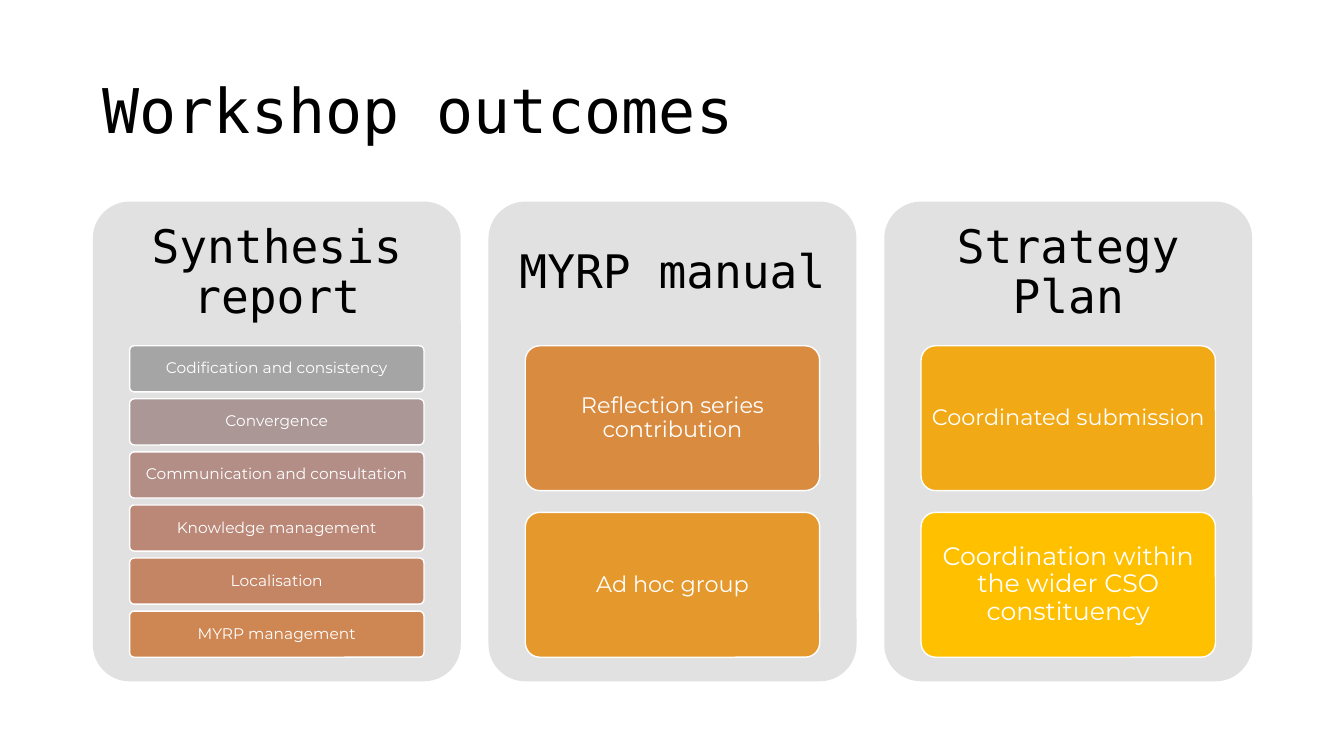
from dataclasses import dataclass

from pptx import Presentation
from pptx.dml.color import RGBColor
from pptx.enum import shapes, text
from pptx.util import Inches, Pt

COLORS = {
    "black": "000000", "white": "FFFFFF", "card": "E1E1E1",
    "gray": "A5A5A5", "mauve": "AB9896", "dusk": "B38E87", "rose": "BB8776",
    "clay": "C48565", "copper": "CE8753", "orange": "D98C3F",
    "amber": "E5982B", "gold": "F1A916", "yellow": "FFC000",
}
MONO, SANS = "DejaVu Sans Mono", "Montserrat"

# Card grid
LEFT, TOP, WIDTH, HEIGHT, STEP = 0.92, 2, 3.65, 4.76, 3.925
HEAD = 1.43
# Items share a fixed stack height; the gap is a share of the item height
INSET, STACK, GAP = 0.365, 3.09, 0.15


@dataclass
class Item:
    label: str
    color: str
    size: int


@dataclass
class Card:
    title: str
    items: list[Item]


CARDS = [
    Card("Synthesis report", [
        Item("Codification and consistency", "gray", 11),
        Item("Convergence", "mauve", 11),
        Item("Communication and consultation", "dusk", 11),
        Item("Knowledge management", "rose", 11),
        Item("Localisation", "clay", 11),
        Item("MYRP management", "copper", 11),
    ]),
    Card("MYRP manual", [
        Item("Reflection series contribution", "orange", 16),
        Item("Ad hoc group", "amber", 16),
    ]),
    Card("Strategy Plan", [
        Item("Coordinated submission", "gold", 16),
        Item("Coordination within the wider CSO constituency", "yellow", 18),
    ]),
]


def rgb(name: str) -> RGBColor:
    return RGBColor.from_string(COLORS[name])


def write(shape, words: str, *, size: int, font: str, color: str,
          pad: tuple[float, float], align=text.PP_ALIGN.CENTER) -> None:
    frame = shape.text_frame
    frame.word_wrap = True
    frame.vertical_anchor = text.MSO_ANCHOR.MIDDLE
    frame.margin_left = frame.margin_right = Inches(pad[0])
    frame.margin_top = frame.margin_bottom = Inches(pad[1])
    para = frame.paragraphs[0]
    para.alignment = align
    para.line_spacing = 0.9
    run = para.add_run()
    run.text = words
    run.font.size = Pt(size)
    run.font.name = font
    run.font.color.rgb = rgb(color)


def add_text(slide, x: float, y: float, w: float, h: float):
    return slide.shapes.add_textbox(Inches(x), Inches(y), Inches(w), Inches(h))


def add_box(slide, x: float, y: float, w: float, h: float, fill: str,
            line: str | None = None):
    box = slide.shapes.add_shape(shapes.MSO_SHAPE.ROUNDED_RECTANGLE,
                                 Inches(x), Inches(y), Inches(w), Inches(h))
    box.adjustments[0] = 0.1
    box.shadow.inherit = False
    box.fill.solid()
    box.fill.fore_color.rgb = rgb(fill)
    if line:
        box.line.color.rgb = rgb(line)
        box.line.width = Pt(1)
    else:
        box.line.fill.background()
    return box


def add_card(slide, card: Card, x: float) -> None:
    add_box(slide, x, TOP, WIDTH, HEIGHT, "card")
    write(add_text(slide, x, TOP, WIDTH, HEAD), card.title,
          size=33, font=MONO, color="black", pad=(0.14, 0.14))
    count = len(card.items)
    high = STACK / (count + GAP * (count - 1))
    for row, item in enumerate(card.items):
        y = TOP + HEAD + row * high * (1 + GAP)
        box = add_box(slide, x + INSET, y, WIDTH - 2 * INSET, high,
                      item.color, "white")
        side = item.size / 400
        write(box, item.label, size=item.size, font=SANS, color="white",
              pad=(side, side * 0.75))


def main() -> None:
    deck = Presentation()
    deck.slide_width, deck.slide_height = Inches(13.33), Inches(7.5)
    slide = deck.slides.add_slide(deck.slide_layouts[6])

    # Title
    write(add_text(slide, LEFT, 0.4, 11.5, 1.45), "Workshop outcomes",
          size=44, font=MONO, color="black", pad=(0.1, 0.05),
          align=text.PP_ALIGN.LEFT)

    # Outcome cards
    for col, card in enumerate(CARDS):
        add_card(slide, card, LEFT + col * STEP)

    deck.save("out.pptx")


if __name__ == "__main__":
    main()
